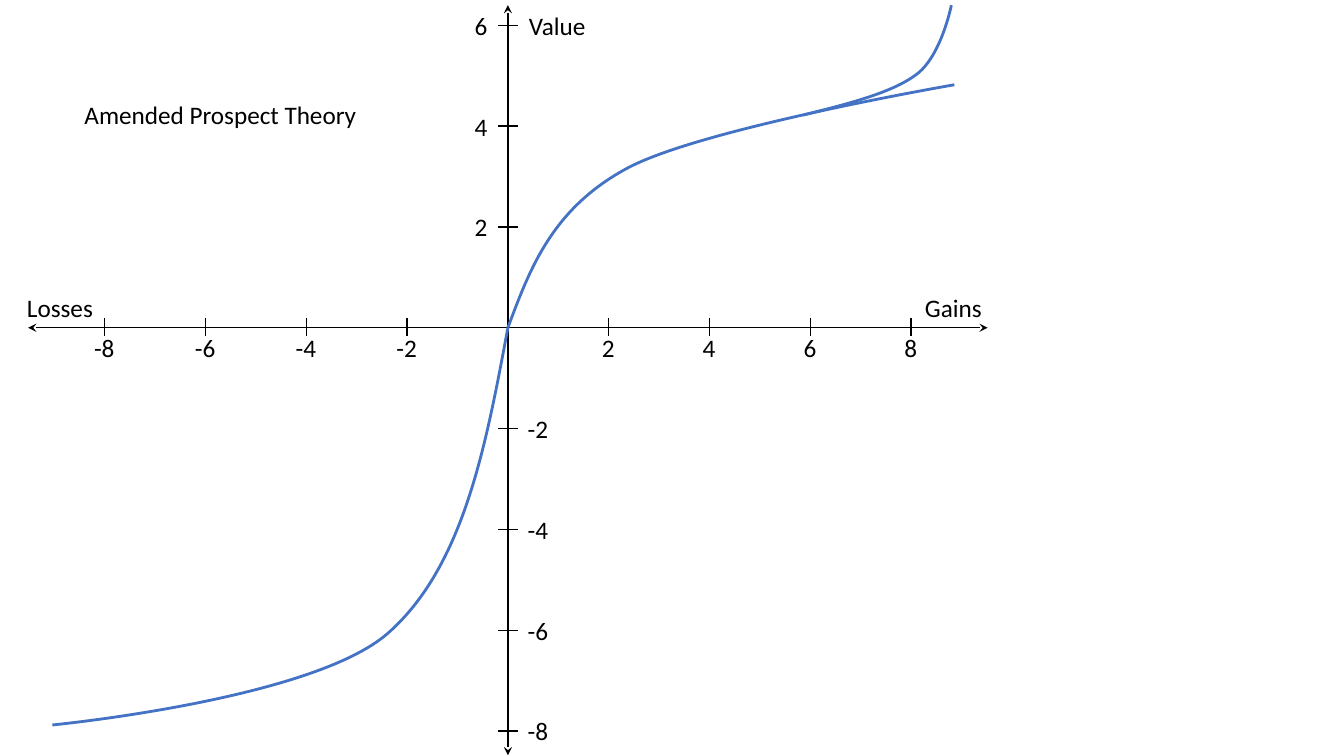
"""Draw the amended prospect theory value curve."""
import lxml.etree
import pptx
import pptx.dml.color
import pptx.enum.shapes
import pptx.enum.text
import pptx.oxml.ns
import pptx.util

Cm = pptx.util.Cm
Pt = pptx.util.Pt
qn = pptx.oxml.ns.qn

COLORS = {"ink": "000000", "curve": "4472C4"}
FONT = "Calibri"
TEXT_H = 1.02
X_RANGE = (-9.52, 9.52)
Y_RANGE = (-8.48, 6.4)
CURVES = {
    "losses": [(0, 0), (-0.44, -2.36), (-0.88, -4.74), (-2.38, -6.06),
               (-3.88, -7.38), (-9.04, -7.88), (-9.04, -7.88)],
    "gains": [(0, 0), (0.44, 1.18), (0.88, 2.36), (2.36, 3.16),
              (3.84, 3.96), (8.86, 4.82), (8.86, 4.82)],
    "upturn": [(5.86, 4.22), (6.74, 4.44), (7.62, 4.66), (8.1, 5.02),
               (8.6, 5.38), (8.8, 6.4), (8.8, 6.4)],
}


def rgb(name):
    """Return the named colour."""
    return pptx.dml.color.RGBColor.from_string(COLORS[name])


def add_line(s, x1, y1, x2, y2, arrows=False):
    """Add a thin straight line, with stealth arrowheads if asked."""
    kind = pptx.enum.shapes.MSO_CONNECTOR.STRAIGHT
    sp = s.shapes.add_connector(kind, Cm(x1), Cm(y1), Cm(x2), Cm(y2))
    sp.line.color.rgb = rgb("ink")
    sp.line.width = Pt(1)
    if arrows:
        ln = sp.line._get_or_add_ln()
        for end in ("a:headEnd", "a:tailEnd"):
            lxml.etree.SubElement(ln, qn(end), type="stealth")
    lxml.etree.SubElement(sp._element.spPr, qn("a:effectLst"))


def add_label(s, text, x, y, w):
    """Add one line of text with its top left corner at x, y."""
    sp = s.shapes.add_textbox(Cm(x), Cm(y), Cm(w), Cm(TEXT_H))
    tf = sp.text_frame
    tf.word_wrap = False
    tf.auto_size = pptx.enum.text.MSO_AUTO_SIZE.SHAPE_TO_FIT_TEXT
    tf.text = text
    r = tf.paragraphs[0].runs[0]
    r.font.name = FONT
    r.font.size = Pt(18)
    r.font.color.rgb = rgb("ink")


def add_curve(s, points):
    """Add a Bezier curve through a start point and triples of points."""
    pts = [(Cm(x), Cm(y)) for x, y in points]
    fb = s.shapes.build_freeform(*pts[0])
    fb.add_line_segments(pts[1:], close=False)
    sp = fb.convert_to_shape()
    path = next(sp._element.iter(qn("a:path")))
    steps = path.findall(qn("a:lnTo"))
    for i in range(0, len(steps), 3):
        bezier = lxml.etree.SubElement(path, qn("a:cubicBezTo"))
        for step in steps[i:i + 3]:
            bezier.append(step[0])
            path.remove(step)
    sp.shadow.inherit = False
    sp.fill.background()
    sp.line.color.rgb = rgb("curve")
    sp.line.width = Pt(2)


def add_graph(s, left, top, width, height):
    """Draw axes, curves, ticks and labels inside the box."""
    x_unit = width / (X_RANGE[1] - X_RANGE[0])
    y_unit = height / (Y_RANGE[1] - Y_RANGE[0])
    x0 = left - X_RANGE[0] * x_unit
    y0 = top + Y_RANGE[1] * y_unit
    add_line(s, left, y0, left + width, y0, arrows=True)
    add_line(s, x0, top, x0, top + height, arrows=True)
    for points in CURVES.values():
        add_curve(s, [(x0 + x * x_unit, y0 - y * y_unit) for x, y in points])

    for value in (-8, -6, -4, -2, 2, 4, 6, 8):
        w = 1.04 if value < 0 else 0.84
        x = x0 + value * x_unit
        add_line(s, x, y0 - 0.25, x, y0 + 0.2)
        add_label(s, str(value), x - w / 2, y0, w)
        if value < Y_RANGE[1]:
            y = y0 - value * y_unit
            add_line(s, x0 - 0.25, y, x0 + 0.25, y)
            label_x = x0 + 0.25 if value < 0 else x0 - 0.25 - w
            add_label(s, str(value), label_x, y - TEXT_H / 2, w)

    add_label(s, "Losses", left - 0.28, y0 - TEXT_H, 2.18)
    add_label(s, "Gains", left + width - 1.83, y0 - TEXT_H, 1.98)
    add_label(s, "Value", x0 + 0.28, top, 1.98)
    add_label(s, "Amended Prospect Theory", left + 1.17, top + 2.26, 7.67)


def main():
    """Build and save the slide."""
    prs = pptx.Presentation()
    prs.slide_width = Cm(33.87)
    prs.slide_height = Cm(19.05)
    s = prs.slides.add_slide(prs.slide_layouts[6])
    add_graph(s, 0.71, 0.13, 24.18, 18.9)
    prs.save("out.pptx")


if __name__ == "__main__":
    main()
